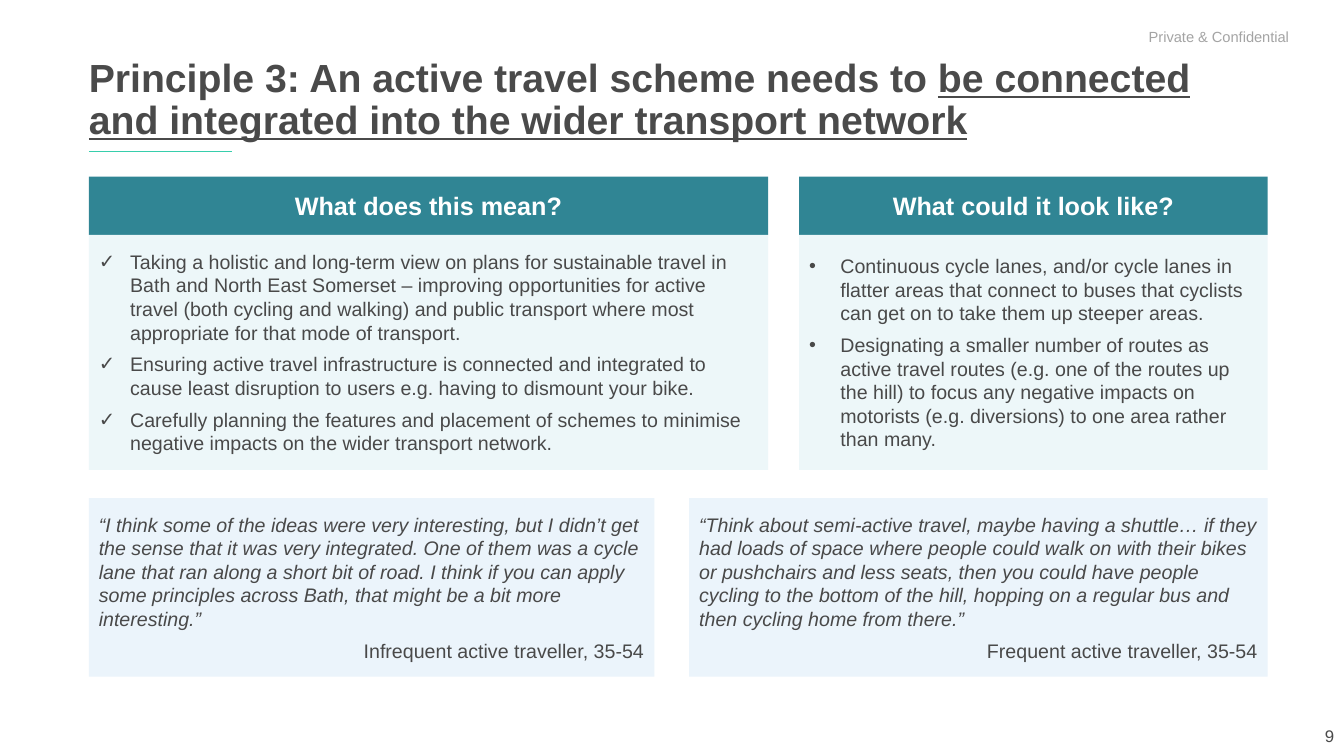
from lxml import etree
from pptx import Presentation
from pptx.dml.color import RGBColor
from pptx.enum.shapes import MSO_CONNECTOR, MSO_SHAPE
from pptx.enum.text import MSO_ANCHOR, MSO_AUTO_SIZE, PP_ALIGN
from pptx.oxml.ns import qn
from pptx.util import Cm, Pt

LEFT, CENTER, RIGHT = PP_ALIGN.LEFT, PP_ALIGN.CENTER, PP_ALIGN.RIGHT
TOP, MIDDLE = MSO_ANCHOR.TOP, MSO_ANCHOR.MIDDLE
RECTANGLE, STRAIGHT = MSO_SHAPE.RECTANGLE, MSO_CONNECTOR.STRAIGHT
NO_AUTOFIT = MSO_AUTO_SIZE.NONE

FONT = "Arial"
COLORS = {
    "white": "FFFFFF",
    "title": "4A4A4A",
    "body": "494949",
    "label": "A4A4A4",
    "accent": "37CEAC",
    "heading": "308594",
    "panel": "EDF7F9",
    "quote": "EBF4FB",
}
MARGIN, CONTENT_RIGHT = 2.24, 31.95
PANEL_TOP, HEADING_HEIGHT, PANEL_HEIGHT = 4.45, 1.47, 7.39
QUOTE_TOP, QUOTE_HEIGHT = 12.55, 4.5
BULLET_INDENT = 0.79

MEANING = [
    "Taking a holistic and long-term view on plans for sustainable travel in Bath and North East "
    "Somerset – improving opportunities for active travel (both cycling and walking) and public "
    "transport where most appropriate for that mode of transport.",
    "Ensuring active travel infrastructure is connected and integrated to cause least disruption "
    "to users e.g. having to dismount your bike.",
    "Carefully planning the features and placement of schemes to minimise negative impacts on "
    "the wider transport network.",
]
EXAMPLES = [
    "Continuous cycle lanes, and/or cycle lanes in flatter areas that connect to buses that "
    "cyclists can get on to take them up steeper areas.",
    "Designating a smaller number of routes as active travel routes (e.g. one of the routes up "
    "the hill) to focus any negative impacts on motorists (e.g. diversions) to one area rather "
    "than many.",
]
PANELS = [
    (MARGIN, 17.12, "What does this mean?", "✓", MEANING),
    (20.14, CONTENT_RIGHT - 20.14, "What could it look like?", "•", EXAMPLES),
]
QUOTES = [
    (MARGIN, 14.25,
     "“I think some of the ideas were very interesting, but I didn’t get the sense that it was "
     "very integrated. One of them was a cycle lane that ran along a short bit of road. I think "
     "if you can apply some principles across Bath, that might be a bit more interesting.”",
     "Infrequent active traveller, 35-54"),
    (17.37, CONTENT_RIGHT - 17.37,
     "“Think about semi-active travel, maybe having a shuttle… if they had loads of space where "
     "people could walk on with their bikes or pushchairs and less seats, then you could have "
     "people cycling to the bottom of the hill, hopping on a regular bus and then cycling home "
     "from there.”",
     "Frequent active traveller, 35-54"),
]


def color(name):
    """Return the named palette colour."""
    return RGBColor.from_string(COLORS[name])


def add_span(para, text, size, color_name, bold=False, italic=False, underline=False):
    """Add one formatted run to a paragraph."""
    span = para.add_run()
    span.text = text
    span.font.name = FONT
    span.font.size = Pt(size)
    span.font.color.rgb = color(color_name)
    span.font.bold = bold
    span.font.italic = italic
    span.font.underline = underline


def add_box(page, left, top, width, height, fill):
    """Add a borderless filled rectangle and return its text frame."""
    box = page.shapes.add_shape(RECTANGLE, Cm(left), Cm(top), Cm(width), Cm(height))
    box.shadow.inherit = False
    box.fill.solid()
    box.fill.fore_color.rgb = color(fill)
    box.line.fill.background()
    frame = box.text_frame
    frame.word_wrap = True
    frame.vertical_anchor = MIDDLE
    frame.paragraphs[0].alignment = LEFT
    return frame


def add_bullet(para, mark):
    """Give a paragraph a hanging bullet mark."""
    properties = para._p.get_or_add_pPr()
    properties.set("marL", str(Cm(BULLET_INDENT)))
    properties.set("indent", str(-Cm(BULLET_INDENT)))
    etree.SubElement(properties, qn("a:buFont")).set("typeface", FONT)
    etree.SubElement(properties, qn("a:buChar")).set("char", mark)


def add_title(page, left, top, width, height):
    """Place the title and the accent line below it."""
    title = page.shapes.title
    title.left, title.top, title.width, title.height = Cm(left), Cm(top), Cm(width), Cm(height)
    frame = title.text_frame
    frame.auto_size = NO_AUTOFIT
    frame.word_wrap = True
    frame.vertical_anchor = TOP
    frame.margin_left = 0
    para = frame.paragraphs[0]
    para.alignment = LEFT
    para.line_spacing = 0.9
    para.space_before = Pt(0)
    add_span(para, "Principle 3: An active travel scheme needs to ", 28, "title", bold=True)
    add_span(para, "be connected and integrated into the wider transport network", 28, "title",
             bold=True, underline=True)

    line_top = Cm(top + height + 0.25)
    line = page.shapes.add_connector(STRAIGHT, Cm(left), line_top, Cm(left + 3.6), line_top)
    line.line.color.rgb = color("accent")
    line.line.width = Pt(1)
    etree.SubElement(line._element.spPr, qn("a:effectLst"))


def add_panel(page, left, top, width, height, heading, mark, points):
    """Place a heading bar above a bulleted panel."""
    bar = add_box(page, left, top, width, HEADING_HEIGHT, "heading")
    bar.paragraphs[0].alignment = CENTER
    add_span(bar.paragraphs[0], heading, 18, "white", bold=True)
    frame = add_box(page, left, top + HEADING_HEIGHT, width, height - HEADING_HEIGHT, "panel")
    for index, point in enumerate(points):
        para = frame.add_paragraph() if index else frame.paragraphs[0]
        add_bullet(para, mark)
        para.alignment = LEFT
        para.space_after = Pt(6)
        add_span(para, point, 14, "body")


def add_quote(page, left, top, width, height, quote, speaker):
    """Place a quotation with its speaker below."""
    frame = add_box(page, left, top, width, height, "quote")
    frame.paragraphs[0].space_after = Pt(6)
    add_span(frame.paragraphs[0], quote, 14, "body", italic=True)
    para = frame.add_paragraph()
    para.alignment = RIGHT
    add_span(para, speaker, 14, "body")


def add_page_marks(page, width, height):
    """Place the confidentiality label and the page number."""
    label = add_box(page, width - 5.17, 0.48, 4.14, 0.89, "white")
    add_span(label.paragraphs[0], "Private & Confidential", 10.5, "label")
    number = page.shapes.add_textbox(Cm(width - 7.62), Cm(height - 1.02), Cm(7.62), Cm(1.02))
    frame = number.text_frame
    frame.word_wrap = True
    frame.vertical_anchor = MIDDLE
    frame.paragraphs[0].alignment = RIGHT
    add_span(frame.paragraphs[0], "9", 12, "title")


def main():
    """Build and save the slide."""
    deck = Presentation()
    width, height = 33.87, 19.05
    deck.slide_width, deck.slide_height = Cm(width), Cm(height)
    page = deck.slides.add_slide(deck.slide_layouts[5])
    add_page_marks(page, width, height)
    add_title(page, MARGIN, 1.35, CONTENT_RIGHT - MARGIN, 2.21)
    for left, panel_width, heading, mark, points in PANELS:
        add_panel(page, left, PANEL_TOP, panel_width, PANEL_HEIGHT, heading, mark, points)
    for left, quote_width, quote, speaker in QUOTES:
        add_quote(page, left, QUOTE_TOP, quote_width, QUOTE_HEIGHT, quote, speaker)
    deck.save("out.pptx")


if __name__ == "__main__":
    main()
